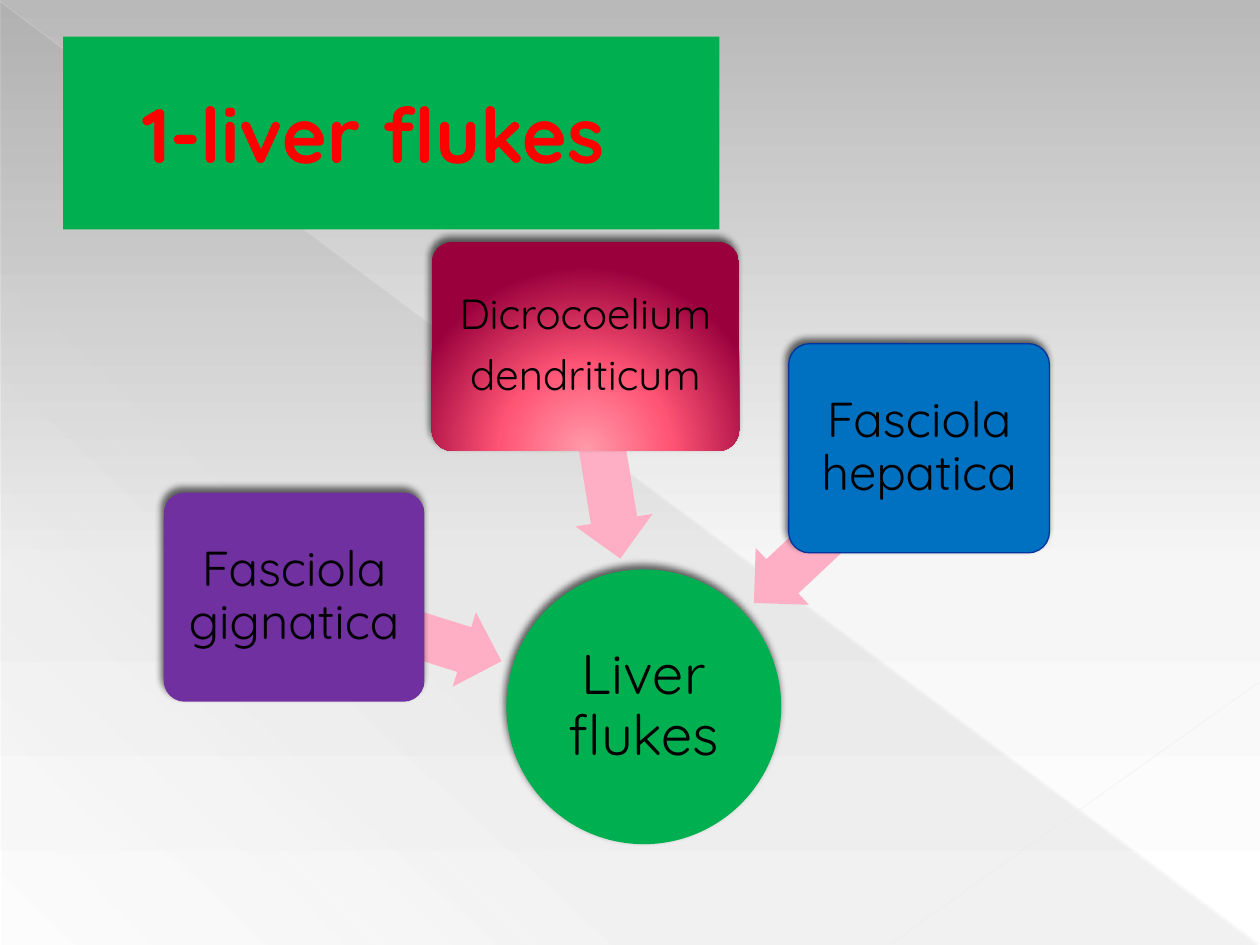
"""Build the liver flukes slide: a hub with three species pointing at it."""
import dataclasses

import lxml.etree
import pptx
import pptx.dml.color
import pptx.enum.shapes
import pptx.enum.text
import pptx.oxml.ns
import pptx.util

Pt = pptx.util.Pt
qn = pptx.oxml.ns.qn
SHAPE = pptx.enum.shapes.MSO_SHAPE
ALIGN = pptx.enum.text.PP_ALIGN


@dataclasses.dataclass(frozen=True)
class Theme:
    """Colours, gradients and type sizes of the slide."""
    font: str = "Quicksand"
    ink: str = "000000"
    title: str = "FF0000"
    green: str = "00B050"
    purple: str = "7030A0"
    blue: str = "0070C0"
    blue_edge: str = "00349E"
    arrow: str = "FFAFC5"
    backdrop: tuple = ((0, "B9B9B9", 100), (60, "F6F6F6", 100), (100, "FFFFFF", 100))
    shade: tuple = ((0, "666666", 10), (70, "666666", 8), (100, "666666", 1))
    crimson: tuple = ((0, "FF9BA9", 100), (46, "FF5575", 100), (100, "99003C", 100))
    title_size: int = 44
    hub_size: int = 32
    node_size: int = 28
    small_size: int = 24


def rgb(value):
    """Return a colour object for a hex string."""
    return pptx.dml.color.RGBColor.from_string(value)


def add_node(parent, tag, **attributes):
    """Append an XML child with the given attributes."""
    return lxml.etree.SubElement(
        parent, qn(tag), {key: str(value) for key, value in attributes.items()})


def add_colour(parent, value, opacity):
    """Append a colour with its opacity in percent."""
    colour = add_node(parent, "a:srgbClr", val=value)
    if opacity < 100:
        add_node(colour, "a:alpha", val=opacity * 1000)


def solid_to_gradient(properties, stops, angle=None):
    """Turn a solid fill into a linear gradient, or a radial one without angle."""
    solid = properties.find(qn("a:solidFill"))
    gradient = lxml.etree.Element(qn("a:gradFill"), rotWithShape="1")
    stop_list = add_node(gradient, "a:gsLst")
    for position, value, opacity in stops:
        add_colour(add_node(stop_list, "a:gs", pos=position * 1000), value, opacity)
    if angle is None:
        radial = add_node(gradient, "a:path", path="circle")
        add_node(radial, "a:fillToRect", l=50000, t=155000, r=50000, b=-55000)
    else:
        add_node(gradient, "a:lin", ang=angle * 60000, scaled=0)
    properties.replace(solid, gradient)


class FlukeSlide:
    """Hold the theme and the current slide, and draw each kind of element."""

    def __init__(self, slide, theme):
        self.slide = slide
        self.theme = theme

    def background(self, stops, angle):
        self.slide.background.fill.solid()
        solid_to_gradient(self.slide.element.find(".//" + qn("p:bgPr")), stops, angle)

    def shape(self, kind, box, fill, angle=None, edge=None):
        shape = self.slide.shapes.add_shape(kind, *map(Pt, box))
        shape.shadow.inherit = False
        shape.fill.solid()
        if isinstance(fill, str):
            shape.fill.fore_color.rgb = rgb(fill)
        else:
            solid_to_gradient(shape.element.spPr, fill, angle)
        if edge:
            shape.line.color.rgb = rgb(edge)
            shape.line.width = Pt(0.75)
        else:
            shape.line.fill.background()
        return shape

    def hairline(self, start, end, colour, width, opacity):
        line = self.slide.shapes.add_connector(
            pptx.enum.shapes.MSO_CONNECTOR.STRAIGHT, *map(Pt, start + end))
        line.line.width = Pt(width)
        line.line.color.rgb = rgb(colour)
        properties = line.element.spPr
        add_node(properties.find(".//" + qn("a:srgbClr")), "a:alpha", val=opacity * 1000)
        add_node(properties, "a:effectLst")

    def run(self, paragraph, text, size, colour, bold=False):
        run = paragraph.add_run()
        run.text = text
        run.font.name = self.theme.font
        run.font.size = Pt(size)
        run.font.bold = bold
        run.font.color.rgb = rgb(colour)

    def title(self, text, box):
        title = self.slide.shapes.title
        title.element.getparent().append(title.element)
        title.left, title.top, title.width, title.height = map(Pt, box)
        title.fill.solid()
        title.fill.fore_color.rgb = rgb(self.theme.green)
        frame = title.text_frame
        frame.auto_size = pptx.enum.text.MSO_AUTO_SIZE.NONE
        frame.vertical_anchor = pptx.enum.text.MSO_ANCHOR.MIDDLE
        heading = frame.paragraphs[0]
        heading.alignment = ALIGN.LEFT
        heading._p.get_or_add_pPr().set("marL", str(Pt(38.16)))
        self.run(heading, text, self.theme.title_size, self.theme.title, bold=True)

    def bubble(self, kind, box, fill, lines, size, inset, edge=None):
        bubble = self.shape(kind, box, fill, edge=edge)
        if kind == SHAPE.ROUNDED_RECTANGLE:
            bubble.adjustments[0] = 0.1
        shadow = add_node(bubble.element.spPr.find(qn("a:effectLst")), "a:outerShdw",
                          blurRad=Pt(4), dist=Pt(3), dir=245 * 60000, rotWithShape=0)
        add_colour(shadow, self.theme.ink, 60)
        frame = bubble.text_frame
        frame.word_wrap = True
        frame.vertical_anchor = pptx.enum.text.MSO_ANCHOR.MIDDLE
        frame.margin_left = frame.margin_right = Pt(inset)
        frame.margin_top = frame.margin_bottom = Pt(inset)
        for index, text in enumerate(lines):
            paragraph = frame.add_paragraph() if index else frame.paragraphs[0]
            paragraph.alignment = ALIGN.CENTER
            paragraph.line_spacing = 0.9
            paragraph.space_after = Pt(size * 0.35)
            paragraph._p.get_or_add_pPr().set("rtl", "1")
            self.run(paragraph, text, size, self.theme.ink)

    def arrow(self, left, top, length, rotation):
        arrow = self.shape(SHAPE.LEFT_ARROW, (left, top, length, 44.6), self.theme.arrow)
        arrow.adjustments[0] = 0.6
        arrow.adjustments[1] = 0.5
        arrow.rotation = rotation


def main():
    """Compose the slide and save it."""
    deck = pptx.Presentation()
    deck.slide_width, deck.slide_height = Pt(720), Pt(540)
    theme = Theme()
    page = FlukeSlide(deck.slides.add_slide(deck.slide_layouts[5]), theme)

    page.background(theme.backdrop, 90)
    page.shape(SHAPE.RIGHT_TRIANGLE, (0.72, 1.44, 718.56, 538.56), theme.shade, angle=133)
    page.hairline((0, 0.72), (719.28, 539.28), "E8E8E8", 0.39, 35)
    page.hairline((720, 389.5), (509, 539.28), "EAEAEA", 0.47, 45)
    page.title("1-liver flukes", (36, 20.9, 375.1, 110.2))

    page.bubble(SHAPE.OVAL, (289.4, 325.4, 157, 157), theme.green,
                ["Liver flukes"], theme.hub_size, 1.6)
    species = (
        ((165.6, 337, 123.8, 197.4), (93.6, 281.5, 149), theme.purple,
         ["Fasciola gignatica"], theme.node_size, 4.2, None),
        ((283, 236.2, 123.1, 260.7), (246.7, 138.2, 175.7), theme.crimson,
         ["Dicrocoelium", "dendriticum"], theme.small_size, 3.6, None),
        ((413.3, 277.9, 129.6, 316.8), (450.7, 196.4, 149), theme.blue,
         ["Fasciola hepatica"], theme.node_size, 4.2, theme.blue_edge),
    )
    for pointer, place, fill, lines, size, inset, edge in species:
        page.arrow(*pointer)
        page.bubble(SHAPE.ROUNDED_RECTANGLE, place + (119.5,), fill, lines, size, inset, edge)
    deck.save("out.pptx")


if __name__ == "__main__":
    main()
